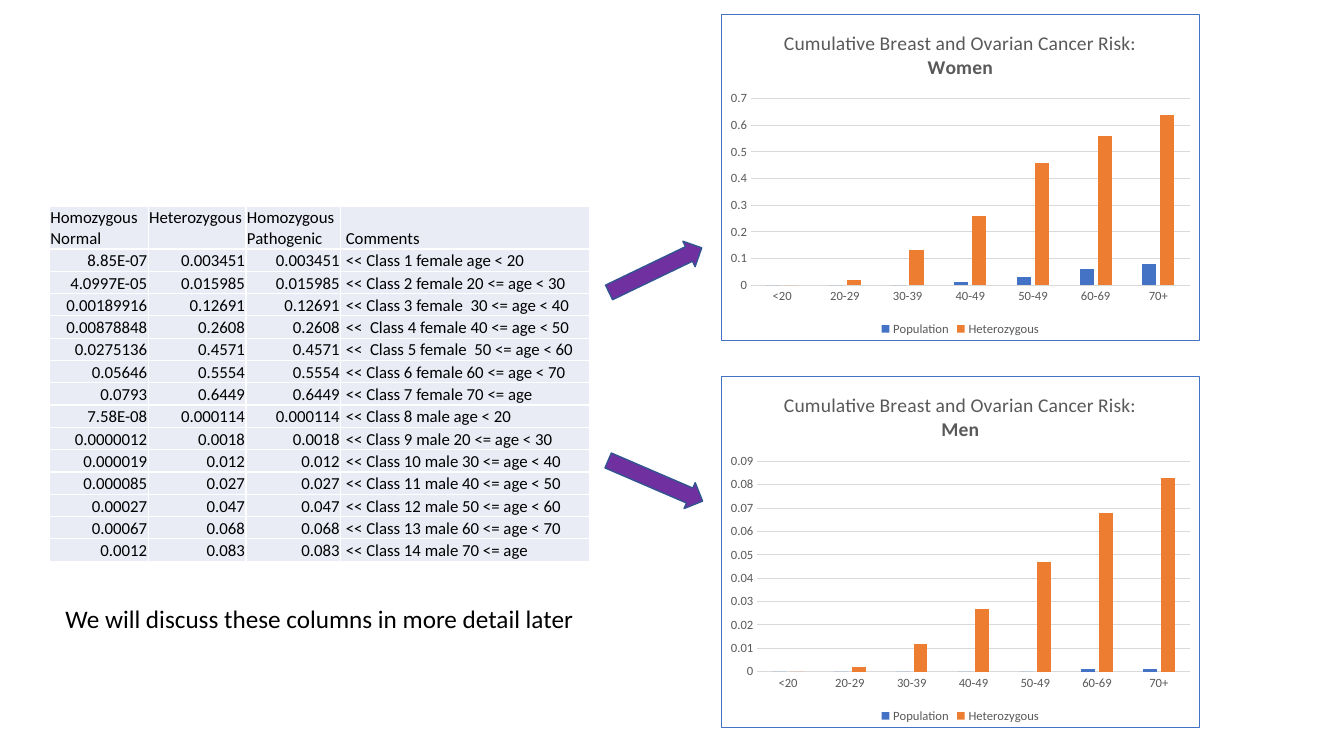
from dataclasses import dataclass
from typing import Any, NamedTuple

from lxml import etree
from pptx import Presentation
from pptx.chart.data import CategoryChartData
from pptx.dml.color import RGBColor
from pptx.enum import chart as ch, shapes, text
from pptx.oxml import parse_xml
from pptx.oxml.ns import nsdecls, qn
from pptx.util import Inches, Pt


@dataclass(frozen=True)
class Theme:
    font: str = "Calibri"
    black: str = "000000"
    white: str = "FFFFFF"
    grey: str = "595959"
    grid: str = "D9D9D9"
    cell: str = "E9EBF5"
    blue: str = "4472C4"
    orange: str = "ED7D31"
    purple: str = "7030A0"
    arrow_edge: str = "325491"
    table_size: int = 12
    chart_size: int = 10
    axis_size: int = 9
    title_size: int = 14
    note_size: int = 18


THEME = Theme()


class RiskClass(NamedTuple):
    normal: str
    carrier: str  # the same risk for heterozygous and homozygous pathogenic
    comment: str


class RiskChart(NamedTuple):
    group: str
    top: float
    height: float
    decimals: int
    classes: list[RiskClass]


class Arrow(NamedTuple):
    top: float
    rotation: float


WOMEN = [
    RiskClass("8.85E-07", "0.003451", "<< Class 1 female age < 20"),
    RiskClass("4.0997E-05", "0.015985", "<< Class 2 female 20 <= age < 30"),
    RiskClass("0.00189916", "0.12691", "<< Class 3 female  30 <= age < 40"),
    RiskClass("0.00878848", "0.2608", "<<  Class 4 female 40 <= age < 50"),
    RiskClass("0.0275136", "0.4571", "<<  Class 5 female  50 <= age < 60"),
    RiskClass("0.05646", "0.5554", "<< Class 6 female 60 <= age < 70"),
    RiskClass("0.0793", "0.6449", "<< Class 7 female 70 <= age"),
]
MEN = [
    RiskClass("7.58E-08", "0.000114", "<< Class 8 male age < 20"),
    RiskClass("0.0000012", "0.0018", "<< Class 9 male 20 <= age < 30"),
    RiskClass("0.000019", "0.012", "<< Class 10 male 30 <= age < 40"),
    RiskClass("0.000085", "0.027", "<< Class 11 male 40 <= age < 50"),
    RiskClass("0.00027", "0.047", "<< Class 12 male 50 <= age < 60"),
    RiskClass("0.00067", "0.068", "<< Class 13 male 60 <= age < 70"),
    RiskClass("0.0012", "0.083", "<< Class 14 male 70 <= age"),
]
HEADERS = ("Homozygous Normal", "Heterozygous", "Homozygous Pathogenic", "Comments")
COLUMN_WIDTHS = (0.98, 0.97, 0.94, 2.47)
TABLE_HEIGHT, HEADER_HEIGHT = 3.52, 0.42
AGES = ("<20", "20-29", "30-39", "40-49", "50-49", "60-69", "70+")
CHARTS = (RiskChart("Women", 0.14, 3.24, 2, WOMEN), RiskChart("Men", 3.73, 3.49, 3, MEN))
ARROWS = (Arrow(2.54, -25.7), Arrow(4.63, 23.3))


def rgb(color: str) -> RGBColor:
    return RGBColor.from_string(color)


def set_font(font: Any, size: int, color: str) -> None:
    font.name, font.size = THEME.font, Pt(size)
    font.color.rgb = rgb(color)


def fill_cell(cell: Any, value: str, is_header: bool, is_comment: bool) -> None:
    cell.text = value
    cell.margin_left = Inches(0.05 if is_comment else 0.01)
    cell.margin_right = cell.margin_top = Inches(0.01)
    cell.margin_bottom = 0
    top_anchored = is_header and not is_comment
    cell.vertical_anchor = text.MSO_ANCHOR.TOP if top_anchored else text.MSO_ANCHOR.BOTTOM
    p = cell.text_frame.paragraphs[0]
    left_aligned = is_header or is_comment
    p.alignment = text.PP_ALIGN.LEFT if left_aligned else text.PP_ALIGN.RIGHT
    set_font(p.font, THEME.table_size, THEME.black)
    # Borders come before the fill in the cell properties
    properties = cell._tc.get_or_add_tcPr()
    for side in ("lnL", "lnR", "lnT", "lnB"):
        line = etree.SubElement(properties, qn(f"a:{side}"), w=str(Pt(1)))
        solid = etree.SubElement(line, qn("a:solidFill"))
        etree.SubElement(solid, qn("a:srgbClr"), val=THEME.white)
    cell.fill.solid()
    cell.fill.fore_color.rgb = rgb(THEME.cell)


def add_risk_table(slide: Any) -> None:
    rows = [HEADERS] + [(c.normal, c.carrier, c.carrier, c.comment) for c in WOMEN + MEN]
    row_height = (TABLE_HEIGHT - HEADER_HEIGHT) / (len(rows) - 1)
    table = slide.shapes.add_table(
        len(rows), len(HEADERS), Inches(0.49), Inches(2.05),
        Inches(sum(COLUMN_WIDTHS)), Inches(TABLE_HEIGHT)).table
    table.first_row = table.horz_banding = False
    for column, width in zip(table.columns, COLUMN_WIDTHS):
        column.width = Inches(width)
    for i, values in enumerate(rows):
        table.rows[i].height = Inches(row_height if i else HEADER_HEIGHT)
        for j, value in enumerate(values):
            fill_cell(table.cell(i, j), value, i == 0, j == len(HEADERS) - 1)


def add_risk_chart(slide: Any, risk: RiskChart) -> None:
    data = CategoryChartData()
    data.categories = AGES
    for name, field in (("Population", "normal"), ("Heterozygous", "carrier")):
        data.add_series(name, [round(float(getattr(c, field)), risk.decimals)
                               for c in risk.classes])
    chart = slide.shapes.add_chart(
        ch.XL_CHART_TYPE.COLUMN_CLUSTERED, Inches(7.15), Inches(risk.top),
        Inches(4.75), Inches(risk.height), data).chart
    set_font(chart.font, THEME.chart_size, THEME.black)

    # Title with the group in bold
    p = chart.chart_title.text_frame.paragraphs[0]
    for words, bold in (("Cumulative Breast and Ovarian Cancer Risk: ", False),
                        (risk.group, True)):
        r = p.add_run()
        r.text = words
        r.font.bold = bold
        set_font(r.font, THEME.title_size, THEME.grey)

    # Columns
    plot = chart.plots[0]
    plot.gap_width, plot.overlap, plot.vary_by_categories = 219, -27, False
    for series, color in zip(plot.series, (THEME.blue, THEME.orange)):
        series.format.fill.solid()
        series.format.fill.fore_color.rgb = rgb(color)

    # Axes and legend
    for axis in (chart.category_axis, chart.value_axis):
        axis.major_tick_mark = axis.minor_tick_mark = ch.XL_TICK_MARK.NONE
        set_font(axis.tick_labels.font, THEME.axis_size, THEME.grey)
    chart.value_axis.format.line.fill.background()
    for line in (chart.category_axis.format.line,
                 chart.value_axis.major_gridlines.format.line):
        line.color.rgb, line.width = rgb(THEME.grid), Pt(0.75)
    chart.has_legend = True
    chart.legend.position = ch.XL_LEGEND_POSITION.BOTTOM
    chart.legend.include_in_layout = False
    set_font(chart.legend.font, THEME.axis_size, THEME.grey)

    # Frame around the chart
    frame = parse_xml(
        f'<c:spPr {nsdecls("c", "a")}><a:noFill/><a:ln w="{Pt(0.75)}"><a:solidFill>'
        f'<a:srgbClr val="{THEME.blue}"/></a:solidFill></a:ln></c:spPr>')
    chart._chartSpace.find(qn("c:chart")).addnext(frame)


def add_arrow(slide: Any, arrow: Arrow) -> None:
    sp = slide.shapes.add_shape(shapes.MSO_SHAPE.RIGHT_ARROW, Inches(5.99),
                                Inches(arrow.top), Inches(1.02), Inches(0.28))
    sp.adjustments[0], sp.adjustments[1] = 0.575, 0.5
    sp.rotation = arrow.rotation
    sp.shadow.inherit = False
    sp.fill.solid()
    sp.fill.fore_color.rgb = rgb(THEME.purple)
    sp.line.color.rgb, sp.line.width = rgb(THEME.arrow_edge), Pt(1)


def add_note(slide: Any, words: str) -> None:
    tf = slide.shapes.add_textbox(Inches(0.55), Inches(5.94),
                                  Inches(5.3), Inches(0.4)).text_frame
    tf.word_wrap = False
    tf.auto_size = text.MSO_AUTO_SIZE.SHAPE_TO_FIT_TEXT
    tf.text = words
    set_font(tf.paragraphs[0].font, THEME.note_size, THEME.black)


def main() -> None:
    prs = Presentation()
    prs.slide_width, prs.slide_height = Inches(13.33), Inches(7.5)
    slide = prs.slides.add_slide(prs.slide_layouts[6])  # blank: the slide has no title
    add_risk_table(slide)
    for risk in CHARTS:
        add_risk_chart(slide, risk)
    for arrow in ARROWS:
        add_arrow(slide, arrow)
    add_note(slide, "We will discuss these columns in more detail later")
    prs.save("out.pptx")


if __name__ == "__main__":
    main()
